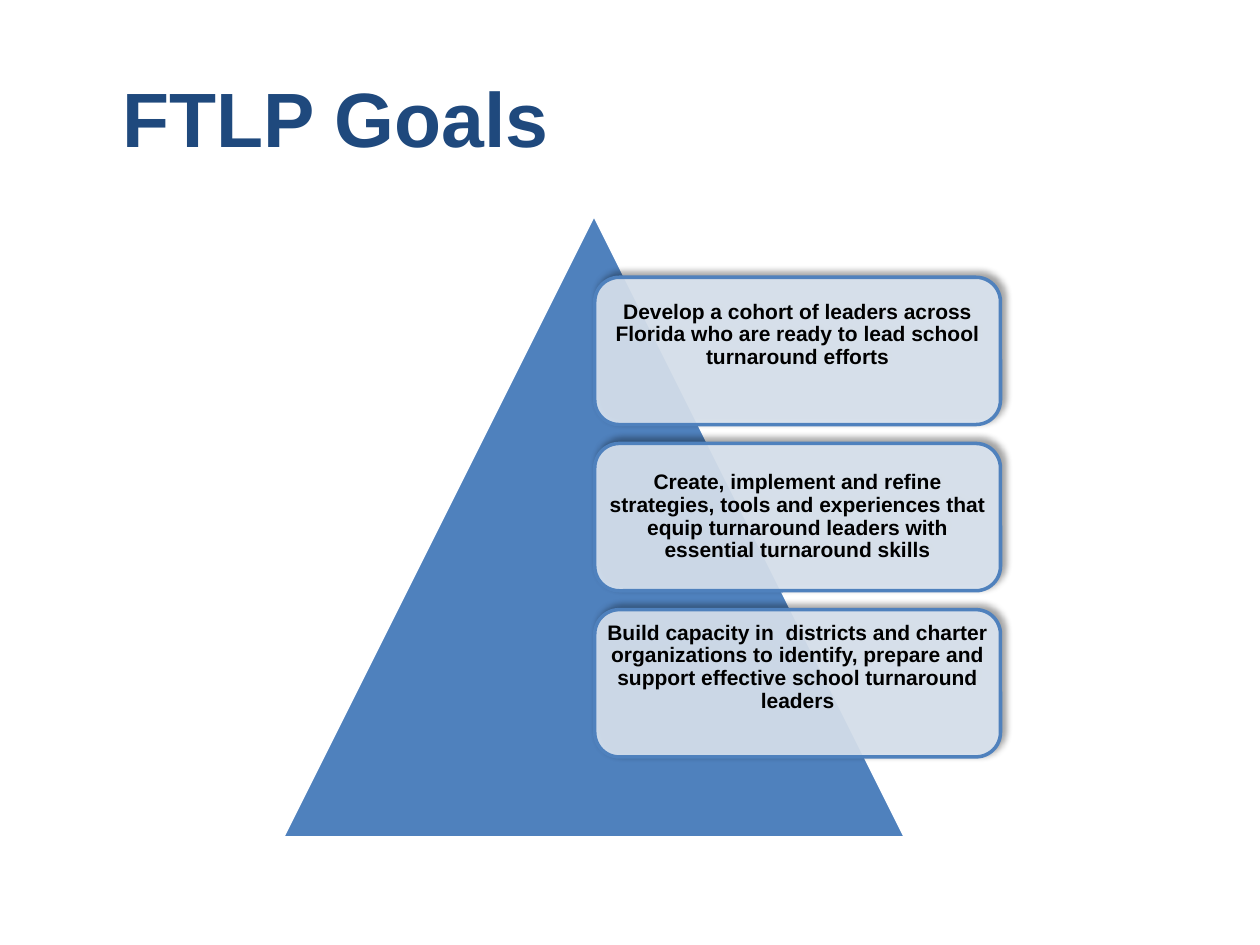
import lxml.etree
import pptx
import pptx.dml.color
import pptx.enum.shapes
import pptx.enum.text
import pptx.oxml
import pptx.oxml.ns
import pptx.util

Cm = pptx.util.Cm
Pt = pptx.util.Pt
SHAPES = pptx.enum.shapes.MSO_SHAPE
ALIGN = pptx.enum.text.PP_ALIGN
MIDDLE = pptx.enum.text.MSO_ANCHOR.MIDDLE
qn = pptx.oxml.ns.qn


def color(value):
    return pptx.dml.color.RGBColor.from_string(value)


def format_text(shape, text, frame_format, paragraph_format, size, font_color):
    for name, value in frame_format.items():
        setattr(shape.text_frame, name, value)
    shape.text_frame.text = text
    paragraph = shape.text_frame.paragraphs[0]
    for name, value in paragraph_format.items():
        setattr(paragraph, name, value)
    font = paragraph.runs[0].font
    for name, value in {"name": "Arial", "size": Pt(size), "bold": True}.items():
        setattr(font, name, value)
    font.color.rgb = color(font_color)


presentation = pptx.Presentation()
presentation.slide_width = Cm(25.4)
presentation.slide_height = Cm(19.05)
slide = presentation.slides.add_slide(presentation.slide_layouts[5])

title = slide.shapes.title
position = {"left": Cm(2.21), "top": Cm(0.76), "width": Cm(21.51), "height": Cm(3.18)}
for name, value in position.items():
    setattr(title, name, value)
format_text(title, "FTLP Goals", {"vertical_anchor": MIDDLE, "word_wrap": True},
            {"alignment": ALIGN.LEFT}, 44, "1F497D")

triangle = slide.shapes.add_shape(
    SHAPES.ISOSCELES_TRIANGLE, Cm(5.69), Cm(4.32), Cm(12.57), Cm(12.57))
triangle.shadow.inherit = False
triangle.fill.solid()
triangle.fill.fore_color.rgb = color("4F81BD")
triangle.line.color.rgb = color("FFFFFF")
triangle.line.width = Pt(2)

goals = [
    ("Develop a cohort of leaders across Florida who are ready to lead school "
     "turnaround efforts", 0.64),
    ("Create, implement and refine strategies, tools and experiences that equip "
     "turnaround leaders with essential turnaround skills", 0),
    ("Build capacity in  districts and charter organizations to identify, prepare "
     "and support effective school turnaround leaders", 0.64),
]
for index, (goal, bottom_margin) in enumerate(goals):
    box = slide.shapes.add_shape(
        SHAPES.ROUNDED_RECTANGLE, Cm(11.99), Cm(5.59 + 3.35 * index), Cm(8.18), Cm(2.97))
    box.fill.solid()
    box.fill.fore_color.rgb = color("DCE6F2")
    fill_color = box.fill._xPr.find(qn("a:solidFill"))[0]
    lxml.etree.SubElement(fill_color, qn("a:alpha"), val="90000")
    box.line.color.rgb = color("4F81BD")
    box.line.width = Pt(2)

    box.shadow.inherit = False
    effects = box._element.spPr.find(qn("a:effectLst"))
    shadow = lxml.etree.SubElement(
        effects, qn("a:outerShdw"), blurRad=str(Pt(4)), dist=str(Pt(3)),
        dir=str(315 * 60000), algn="bl", rotWithShape="0")
    shadow_color = lxml.etree.SubElement(shadow, qn("a:srgbClr"), val="000000")
    lxml.etree.SubElement(shadow_color, qn("a:alpha"), val="40000")

    frame_format = {
        "vertical_anchor": MIDDLE, "word_wrap": True, "margin_left": 0,
        "margin_right": 0, "margin_top": 0, "margin_bottom": Cm(bottom_margin),
    }
    format_text(box, goal, frame_format,
                {"alignment": ALIGN.CENTER, "line_spacing": 0.9}, 12, "000000")

presentation.save("out.pptx")
